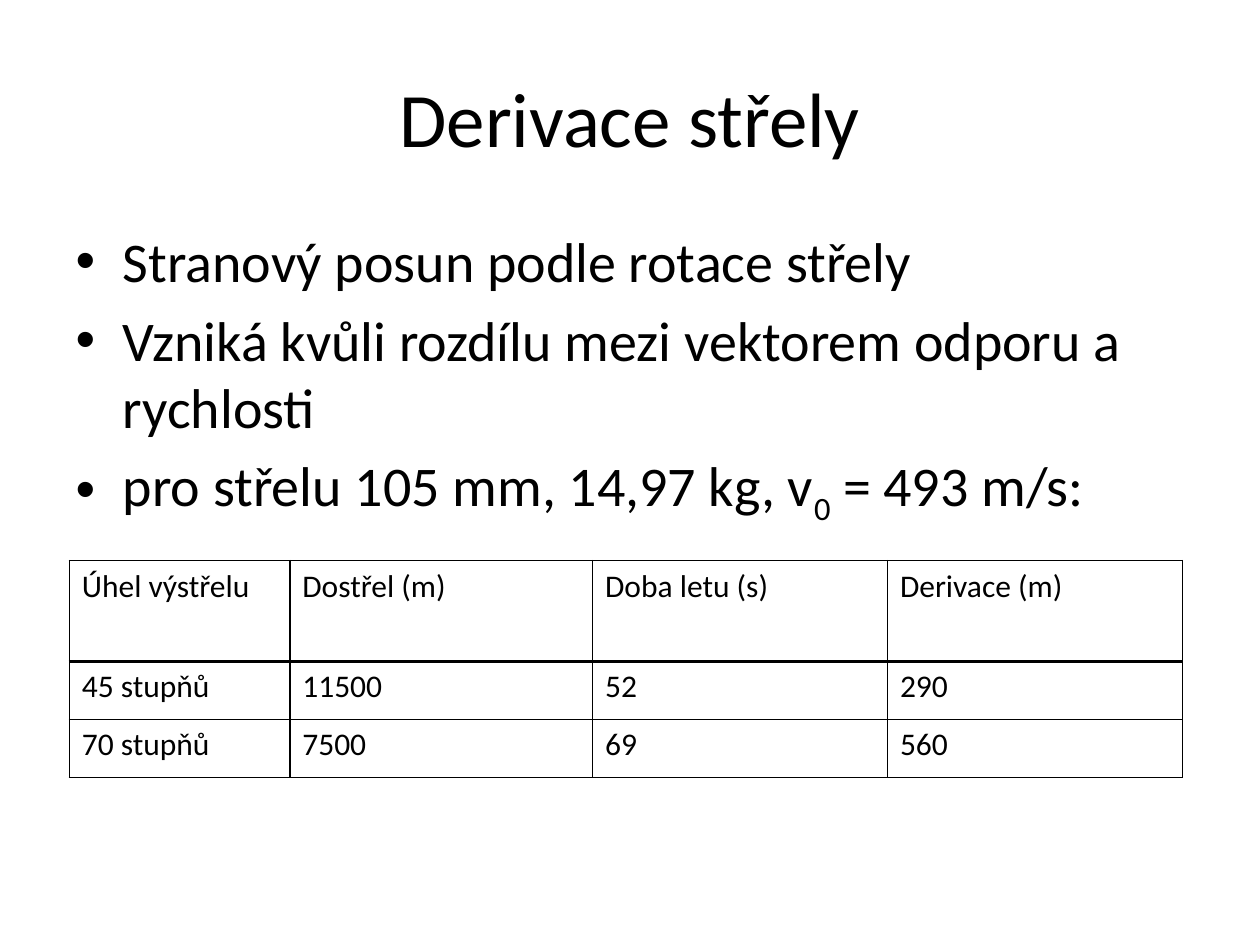
from dataclasses import dataclass

from lxml.etree import SubElement
from pptx import Presentation
from pptx.dml.color import RGBColor
from pptx.enum.text import MSO_ANCHOR, PP_ALIGN
from pptx.oxml.ns import qn
from pptx.util import Pt

COLORS = {"text": "000000", "border": "000000", "background": "FFFFFF"}
FONT = "Calibri"


@dataclass
class Frame:
    left: float
    top: float
    width: float
    height: float


@dataclass
class Span:
    text: str
    baseline: int = 0


TITLE_FRAME = Frame(36, 21.6, 648, 90)
BODY_FRAME = Frame(36, 126, 648, 356.4)
BULLETS = [
    [Span("Stranový posun podle rotace střely")],
    [Span("Vzniká kvůli rozdílu mezi vektorem odporu a rychlosti")],
    [Span("pro střelu 105 mm, 14,97 kg, v"), Span("0", -25), Span(" = 493 m/s:")],
]

COLUMN_WIDTHS = [126, 173, 168.5, 168.5]
ROW_HEIGHTS = [57.6, 33.1, 33.1]
TABLE_FRAME = Frame(39.6, 320.4, sum(COLUMN_WIDTHS), sum(ROW_HEIGHTS))
FIRING_TABLE = [
    ["Úhel výstřelu", "Dostřel (m)", "Doba letu (s)", "Derivace (m)"],
    ["45 stupňů", "11500", "52", "290"],
    ["70 stupňů", "7500", "69", "560"],
]


def points(frame: Frame) -> list:
    return [Pt(value) for value in (frame.left, frame.top, frame.width, frame.height)]


def place(box, frame: Frame) -> None:
    box.left, box.top, box.width, box.height = points(frame)


def add_text(para, text: str, *, size: float, color: str = "text", baseline: int = 0) -> None:
    span = para.add_run()
    span.text = text
    span.font.name = FONT
    span.font.size = Pt(size)
    span.font.color.rgb = RGBColor.from_string(COLORS[color])
    if baseline:
        span.font._element.set("baseline", str(baseline * 1000))


def set_borders(cell, widths: dict[str, float]) -> None:
    properties = cell._tc.get_or_add_tcPr()
    for side, width in widths.items():
        line = SubElement(properties, qn(f"a:ln{side}"), w=str(Pt(width)))
        fill = SubElement(line, qn("a:solidFill"))
        SubElement(fill, qn("a:srgbClr"), val=COLORS["border"])


def add_firing_table(page) -> None:
    table = page.shapes.add_table(
        len(ROW_HEIGHTS), len(COLUMN_WIDTHS), *points(TABLE_FRAME)
    ).table
    table.first_row = table.horz_banding = False
    for column, width in zip(table.columns, COLUMN_WIDTHS):
        column.width = Pt(width)
    for index, (row, height) in enumerate(zip(table.rows, ROW_HEIGHTS)):
        row.height = Pt(height)
        # The rule under the header is heavier
        top = 2 if index == 1 else 1
        bottom = 2 if index == 0 else 1
        for cell, text in zip(row.cells, FIRING_TABLE[index]):
            set_borders(cell, {"L": 1, "R": 1, "T": top, "B": bottom})
            cell.fill.background()
            add_text(cell.text_frame.paragraphs[0], text, size=18)


def main() -> None:
    deck = Presentation()
    deck.slide_width, deck.slide_height = Pt(720), Pt(540)
    page = deck.slides.add_slide(deck.slide_layouts[1])
    page.background.fill.solid()
    page.background.fill.fore_color.rgb = RGBColor.from_string(COLORS["background"])

    # Title
    title = page.shapes.title
    place(title, TITLE_FRAME)
    title.text_frame.vertical_anchor = MSO_ANCHOR.MIDDLE
    heading = title.text_frame.paragraphs[0]
    heading.alignment = PP_ALIGN.CENTER
    add_text(heading, "Derivace střely", size=44)

    # Bulleted list
    body = page.placeholders[1]
    place(body, BODY_FRAME)
    for index, spans in enumerate(BULLETS):
        para = body.text_frame.add_paragraph() if index else body.text_frame.paragraphs[0]
        for span in spans:
            add_text(para, span.text, size=32, baseline=span.baseline)

    # Range, flight time and drift
    add_firing_table(page)

    deck.save("out.pptx")


if __name__ == "__main__":
    main()
